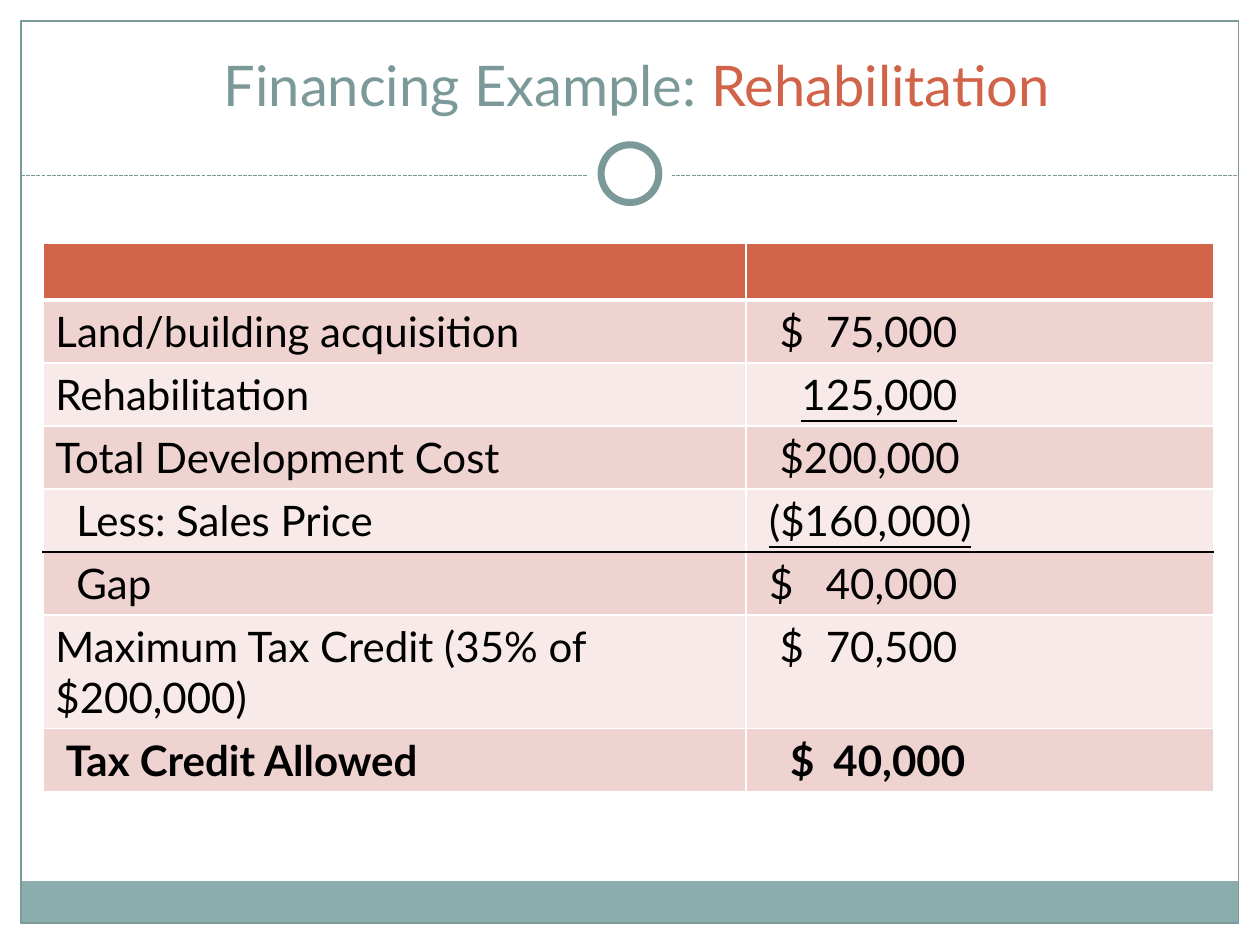
from dataclasses import dataclass

from lxml.etree import SubElement
from pptx import Presentation
from pptx.dml.color import RGBColor
from pptx.enum.dml import MSO_LINE
from pptx.enum.shapes import MSO_CONNECTOR, MSO_SHAPE
from pptx.enum.text import MSO_ANCHOR, PP_ALIGN
from pptx.oxml.ns import qn
from pptx.util import Pt


@dataclass(frozen=True)
class Theme:
    font: str = "Lato"
    title_size: float = 32
    body_size: float = 24
    white: str = "FFFFFF"
    black: str = "000000"
    teal: str = "7C999A"
    footer: str = "8CADAE"
    accent: str = "D16349"
    band_dark: str = "EED3D0"
    band_light: str = "F7EAE9"


THEME = Theme()
CELL_MARGIN = 7.2
COLUMN_WIDTHS = (401.8, 267.1)
HEADER_HEIGHT, ROW_HEIGHT, TALL_ROW_HEIGHT = 32.4, 36, 64.8
AMOUNT_END = 113.5  # right edge of the figures, from the cell's text edge
GAP_ROW = 5  # a black rule runs above this row

# label, label indent, amount, amount indent, format of the amount
COSTS = [
    ("Land/building acquisition", 0, "$\t75,000", 12, {}),
    ("Rehabilitation", 0, "\t125,000", 0, {"underline": True}),
    ("Total Development Cost", 0, "$200,000", 12, {}),
    ("Less: Sales Price", 12, "($160,000)", 6, {"underline": True}),
    ("Gap", 12, "$\t40,000", 6, {}),
    ("Maximum Tax Credit (35% of $200,000)", 0, "$\t70,500", 12, {}),
    ("Tax Credit Allowed", 6, "$\t40,000", 18, {"bold": True, "end": 118}),
]


def rgb(color):
    return RGBColor.from_string(color)


def add_text(paragraph, text, *, size=THEME.body_size, color=THEME.black,
             bold=False, underline=False):
    run = paragraph.add_run()
    run.text = text
    font = run.font
    font.name, font.size = THEME.font, Pt(size)
    font.bold, font.underline = bold, underline
    font.color.rgb = rgb(color)


def add_panel(slide, kind, left, top, width, height, fill=None, line=None, weight=0.75):
    panel = slide.shapes.add_shape(kind, Pt(left), Pt(top), Pt(width), Pt(height))
    panel.shadow.inherit = False
    if fill:
        panel.fill.solid()
        panel.fill.fore_color.rgb = rgb(fill)
    else:
        panel.fill.background()
    if line:
        panel.line.color.rgb = rgb(line)
        panel.line.width = Pt(weight)
    else:
        panel.line.fill.background()


def add_divider(slide, left, right, y):
    divider = slide.shapes.add_connector(
        MSO_CONNECTOR.STRAIGHT, Pt(left), Pt(y), Pt(right), Pt(y))
    divider.line.color.rgb = rgb(THEME.teal)
    divider.line.width = Pt(0.75)
    divider.line.dash_style = MSO_LINE.SQUARE_DOT
    SubElement(divider.line._get_or_add_ln().getparent(), qn("a:effectLst"))


def add_title(slide):
    title = slide.shapes.title
    title.left, title.top, title.width, title.height = Pt(12), Pt(18), Pt(697), Pt(60)
    frame = title.text_frame
    frame.vertical_anchor = MSO_ANCHOR.MIDDLE
    frame.margin_left = Pt(CELL_MARGIN + 7)
    heading = frame.paragraphs[0]
    heading.alignment = PP_ALIGN.CENTER
    add_text(heading, "Financing Example: ", size=THEME.title_size, color=THEME.teal)
    add_text(heading, "Rehabilitation", size=THEME.title_size, color=THEME.accent)


def set_borders(cell, top, bottom):
    """Draw white sides, and the given (color, weight) above and below."""
    side = (THEME.white, 1)
    properties = cell._tc.get_or_add_tcPr()
    edges = zip(("lnL", "lnR", "lnT", "lnB"), (side, side, top, bottom))
    for position, (tag, (color, weight)) in enumerate(edges):
        edge = SubElement(properties, qn(f"a:{tag}"), w=str(Pt(weight)))
        fill = SubElement(edge, qn("a:solidFill"))
        SubElement(fill, qn("a:srgbClr"), val=color)
        properties.insert(position, edge)  # borders precede the fill


def fill_cell(cell, text, indent, end=AMOUNT_END, **style):
    cell.margin_left = Pt(CELL_MARGIN + indent)
    paragraph = cell.text_frame.paragraphs[0]
    if "\t" in text:
        stops = SubElement(paragraph._p.get_or_add_pPr(), qn("a:tabLst"))
        SubElement(stops, qn("a:tab"), pos=str(Pt(end - indent)), algn="r")
    add_text(paragraph, text, **style)


def add_cost_table(slide):
    heights = [HEADER_HEIGHT] + [ROW_HEIGHT] * len(COSTS)
    heights[GAP_ROW + 1] = TALL_ROW_HEIGHT
    table = slide.shapes.add_table(
        len(heights), len(COLUMN_WIDTHS), Pt(24.5), Pt(139),
        Pt(sum(COLUMN_WIDTHS)), Pt(sum(heights))).table
    for column, width in zip(table.columns, COLUMN_WIDTHS):
        column.width = Pt(width)

    # Bands and rules
    rules = [(THEME.white, 1)] * (len(heights) + 1)
    rules[1] = (THEME.white, 3)
    rules[GAP_ROW] = (THEME.black, 1)
    for index, (row, height) in enumerate(zip(table.rows, heights)):
        row.height = Pt(height)
        band = THEME.band_dark if index % 2 else THEME.band_light
        for cell in row.cells:
            cell.fill.solid()
            cell.fill.fore_color.rgb = rgb(band if index else THEME.accent)
            set_borders(cell, rules[index], rules[index + 1])

    # Labels and amounts
    for index, (label, label_indent, amount, amount_indent, style) in enumerate(COSTS, 1):
        fill_cell(table.cell(index, 0), label, label_indent, bold=style.get("bold", False))
        fill_cell(table.cell(index, 1), amount, amount_indent, **style)


def main():
    deck = Presentation()
    deck.slide_width, deck.slide_height = Pt(720), Pt(540)
    slide = deck.slides.add_slide(deck.slide_layouts[5])

    # Frame, footer band and ring on the divider
    add_panel(slide, MSO_SHAPE.RECTANGLE, 11.75, 503.5, 695.75, 24.5, fill=THEME.footer)
    add_panel(slide, MSO_SHAPE.RECTANGLE, 12, 12, 695.75, 515.5, line=THEME.teal)
    add_divider(slide, 12, 707.75, 100.5)
    add_panel(slide, MSO_SHAPE.OVAL, 336, 75.5, 48, 48, fill=THEME.white)
    add_panel(slide, MSO_SHAPE.OVAL, 343.5, 82.75, 33, 33,
              fill=THEME.white, line=THEME.teal, weight=4)

    # Content
    add_title(slide)
    add_cost_table(slide)
    deck.save("out.pptx")


if __name__ == "__main__":
    main()
